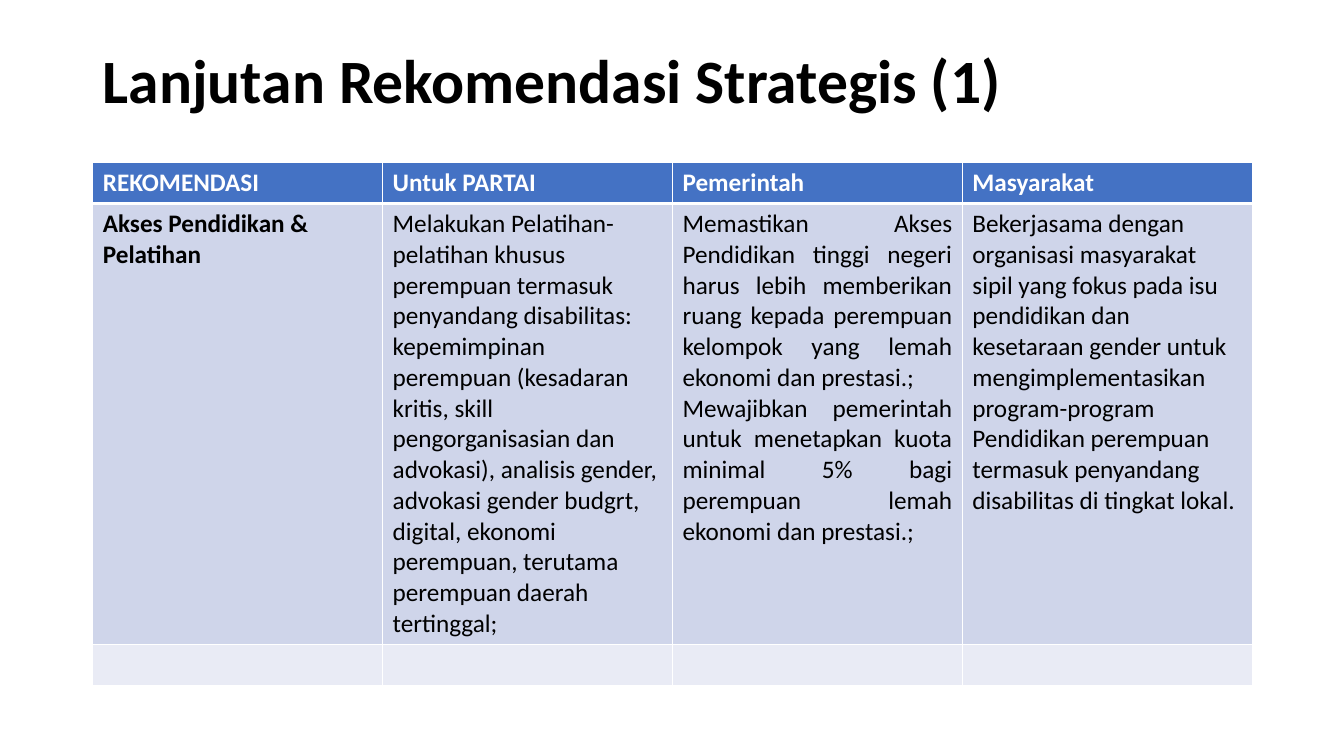
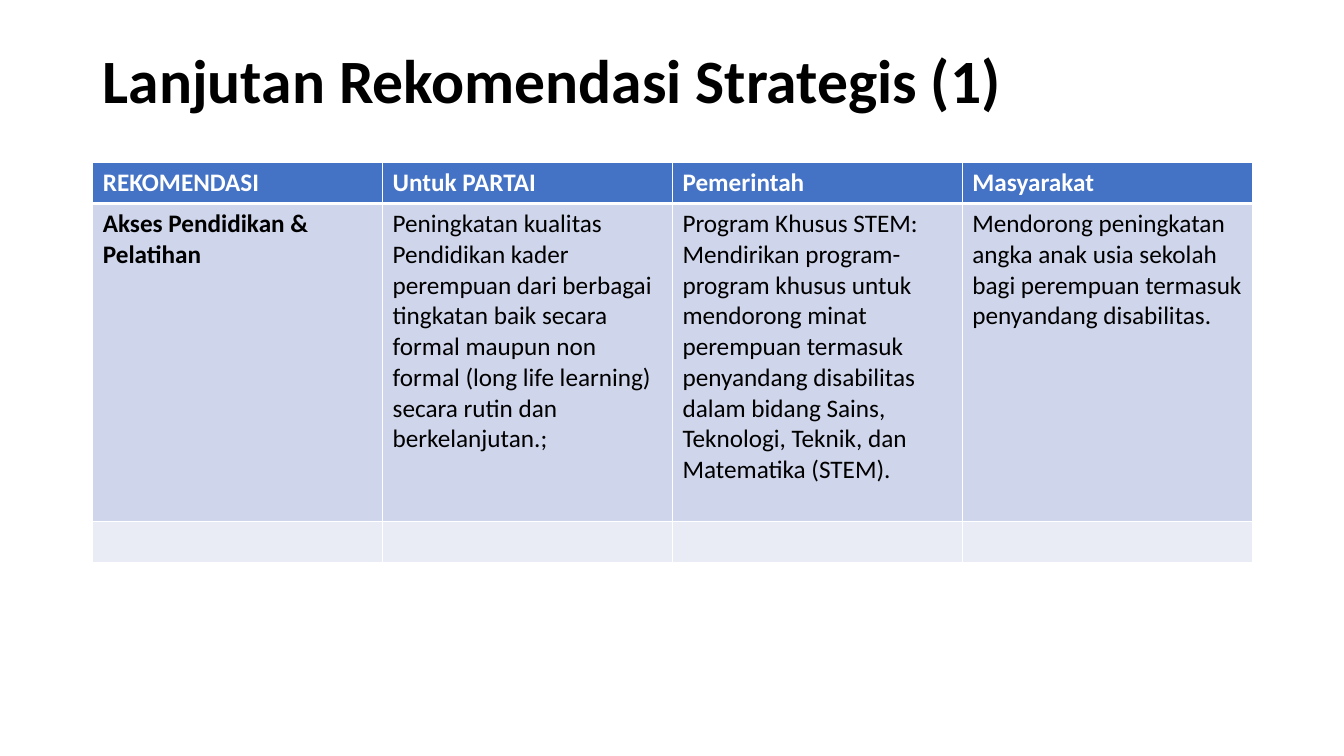
from lxml.etree import SubElement
from pptx import Presentation
from pptx.dml.color import RGBColor
from pptx.enum.text import MSO_ANCHOR, MSO_AUTO_SIZE, PP_ALIGN
from pptx.oxml.ns import qn
from pptx.util import Inches, Pt

COLORS = {
    "title": "000000",
    "header": "4472C4",
    "header_text": "FFFFFF",
    "body": "CFD5EA",
    "empty": "E9EBF5",
    "text": "000000",
    "border": "FFFFFF",
}
FONT = "Calibri"
WIDTH, HEIGHT = 13.33, 7.5
MARGIN = 0.92
CONTENT_WIDTH = 11.5
TITLE_TOP, TITLE_HEIGHT = 0.4, 0.85
TABLE_TOP = 1.61
SLIM_ROW = 0.41
TITLE_ONLY = 5

TITLE = "Lanjutan Rekomendasi Strategis (1)"
HEADERS = ["REKOMENDASI", "Untuk PARTAI", "Pemerintah", "Masyarakat"]
TOPIC = ["Akses Pendidikan & Pelatihan"]

# Each body cell is a list of paragraphs.
SLIDES = [
    {
        "body_height": 4.37,
        "justified_columns": {2},
        "cells": [
            TOPIC,
            [
                "Melakukan Pelatihan-pelatihan khusus perempuan termasuk "
                "penyandang disabilitas:",
                "kepemimpinan perempuan (kesadaran kritis, skill pengorganisasian "
                "dan advokasi), analisis gender, advokasi gender budgrt, digital, "
                "ekonomi perempuan, terutama perempuan daerah tertinggal;",
            ],
            [
                "Memastikan Akses Pendidikan tinggi negeri harus lebih memberikan "
                "ruang kepada perempuan kelompok yang lemah ekonomi dan prestasi.;",
                "Mewajibkan pemerintah untuk menetapkan kuota minimal 5% bagi "
                "perempuan lemah ekonomi dan prestasi.;",
            ],
            [
                "Bekerjasama dengan organisasi masyarakat sipil yang fokus pada isu "
                "pendidikan dan kesetaraan gender untuk mengimplementasikan "
                "program-program Pendidikan perempuan termasuk penyandang "
                "disabilitas di tingkat lokal.",
            ],
        ],
    },
    {
        "body_height": 3.15,
        "justified_columns": set(),
        "cells": [
            TOPIC,
            [
                "Peningkatan kualitas Pendidikan kader perempuan dari berbagai "
                "tingkatan baik secara formal maupun non formal (long life learning) "
                "secara rutin dan berkelanjutan.;",
            ],
            [
                "Program Khusus STEM: Mendirikan program-program khusus untuk "
                "mendorong minat perempuan termasuk penyandang disabilitas dalam "
                "bidang Sains, Teknologi, Teknik, dan Matematika (STEM).",
            ],
            [
                "Mendorong peningkatan angka anak usia sekolah bagi perempuan "
                "termasuk penyandang disabilitas.",
            ],
        ],
    },
]


def write_text(frame, paragraphs, *, size=18, color, bold=False,
               align=PP_ALIGN.LEFT, line_spacing=None):
    for index, text in enumerate(paragraphs):
        paragraph = frame.add_paragraph() if index else frame.paragraphs[0]
        paragraph.alignment = align
        paragraph.line_spacing = line_spacing
        run = paragraph.add_run()
        run.text = text
        run.font.name = FONT
        run.font.size = Pt(size)
        run.font.bold = bold
        run.font.color.rgb = RGBColor.from_string(COLORS[color])


def set_borders(cell, widths):
    """Draw the left, right, top and bottom borders, placed ahead of the fill."""
    properties = cell._tc.get_or_add_tcPr()
    for index, (side, width) in enumerate(zip("LRTB", widths)):
        line = SubElement(properties, qn(f"a:ln{side}"), w=str(Pt(width)))
        fill = SubElement(line, qn("a:solidFill"))
        SubElement(fill, qn("a:srgbClr"), val=COLORS["border"])
        properties.insert(index, line)


def style_cell(cell, fill, borders=(1, 1, 1, 1)):
    cell.fill.solid()
    cell.fill.fore_color.rgb = RGBColor.from_string(COLORS[fill])
    set_borders(cell, borders)


def add_title(slide):
    title = slide.shapes.title
    title.left, title.top = Inches(MARGIN), Inches(TITLE_TOP)
    title.width, title.height = Inches(CONTENT_WIDTH), Inches(TITLE_HEIGHT)
    frame = title.text_frame
    frame.word_wrap = True
    frame.auto_size = MSO_AUTO_SIZE.NONE
    frame.vertical_anchor = MSO_ANCHOR.MIDDLE
    write_text(frame, [TITLE], size=44, color="title", bold=True, line_spacing=0.9)


def add_recommendations(slide, content):
    heights = [SLIM_ROW, content["body_height"], SLIM_ROW]
    table = slide.shapes.add_table(
        len(heights), len(HEADERS), Inches(MARGIN), Inches(TABLE_TOP),
        Inches(CONTENT_WIDTH), Inches(sum(heights))).table
    for row, height in zip(table.rows, heights):
        row.height = Inches(height)
    for column, (header, paragraphs) in enumerate(zip(HEADERS, content["cells"])):
        table.columns[column].width = Inches(CONTENT_WIDTH / len(HEADERS))
        header_cell, body_cell, empty_cell = (
            table.cell(row, column) for row in range(len(heights)))
        style_cell(header_cell, "header", (1, 1, 1, 3))
        style_cell(body_cell, "body", (1, 1, 3, 1))
        style_cell(empty_cell, "empty")
        write_text(header_cell.text_frame, [header], color="header_text", bold=True)
        justified = column in content["justified_columns"]
        write_text(body_cell.text_frame, paragraphs, color="text", bold=column == 0,
                   align=PP_ALIGN.JUSTIFY if justified else PP_ALIGN.LEFT)


def main():
    presentation = Presentation()
    presentation.slide_width = Inches(WIDTH)
    presentation.slide_height = Inches(HEIGHT)
    for content in SLIDES:
        slide = presentation.slides.add_slide(presentation.slide_layouts[TITLE_ONLY])
        add_title(slide)
        add_recommendations(slide, content)
    presentation.save("out.pptx")


if __name__ == "__main__":
    main()
